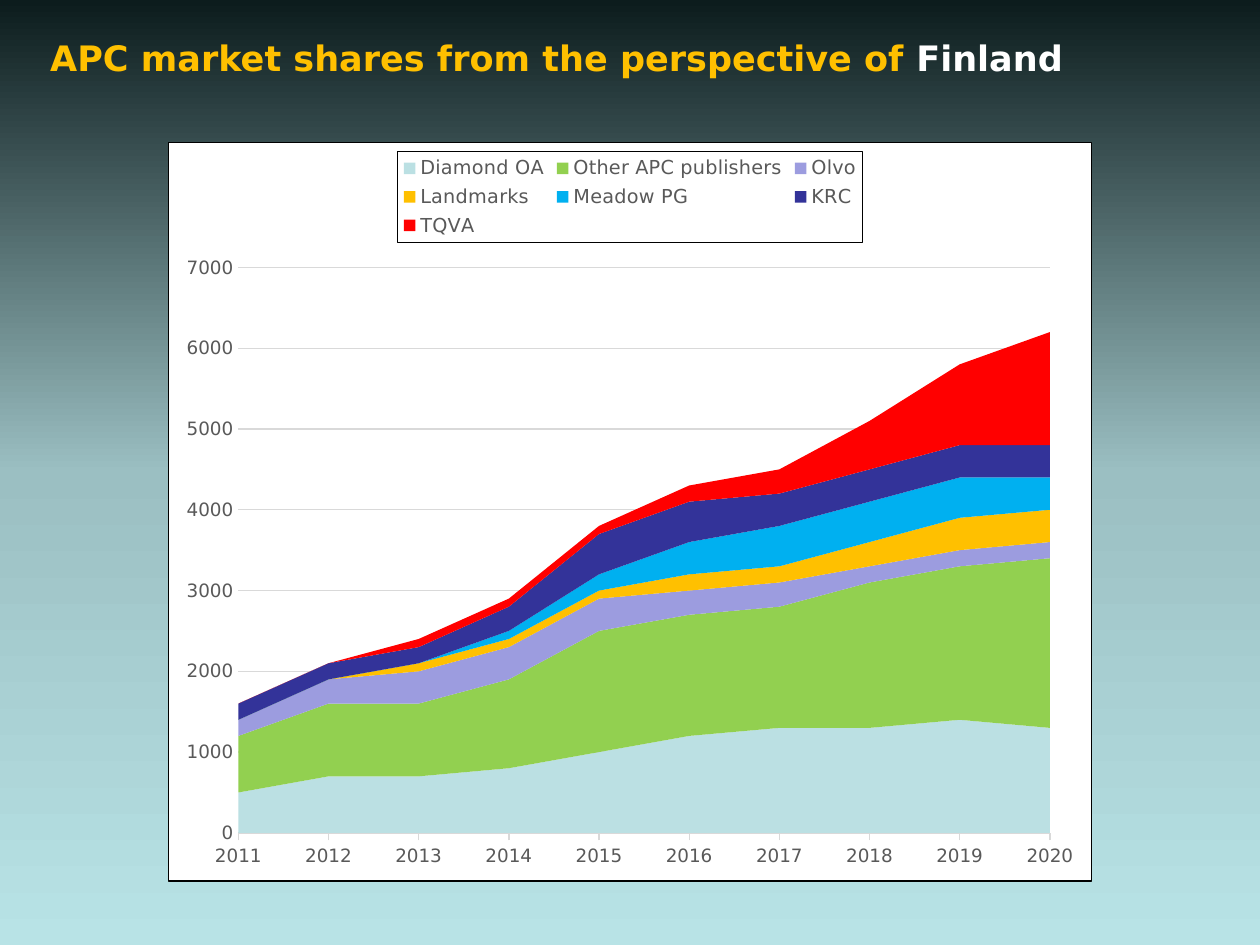
from copy import deepcopy
from dataclasses import dataclass

import pptx
import pptx.chart.data
import pptx.dml.color
import pptx.enum.chart
import pptx.enum.text
import pptx.oxml
import pptx.oxml.ns
import pptx.util

WIDTH = pptx.util.Inches(10)
HEIGHT = pptx.util.Inches(7.5)
FONT = "DejaVu Sans"
COLOURS = {
    "sky_top": "0C1C1D",
    "sky_middle": "9BBFC2",
    "sky_bottom": "B8E3E6",
    "gold": "FFC000",
    "white": "FFFFFF",
    "black": "000000",
    "label": "595959",
    "grid": "D9D9D9",
    "pale_teal": "BBE0E3",
    "green": "92D050",
    "lilac": "9C9CDF",
    "blue": "00B0F0",
    "navy": "333399",
    "red": "FF0000",
}


@dataclass(frozen=True)
class Share:
    left: float
    top: float
    width: float
    height: float

    def lengths(self) -> tuple[int, int, int, int]:
        return (int(self.left * WIDTH), int(self.top * HEIGHT),
                int(self.width * WIDTH), int(self.height * HEIGHT))


@dataclass(frozen=True)
class TitleRun:
    wording: str
    colour: str


@dataclass(frozen=True)
class Publisher:
    name: str
    colour: str
    articles: tuple[int, ...]


TITLE_AREA = Share(0.03, 0.027, 0.909, 0.067)
CHART_AREA = Share(0.133, 0.15, 0.734, 0.783)
TITLE = (
    TitleRun("APC market shares from the perspective of ", "gold"),
    TitleRun("Finland", "white"),
)
YEARS = [str(year) for year in range(2011, 2021)]
PUBLISHERS = (
    Publisher("Diamond OA", "pale_teal",
              (500, 700, 700, 800, 1000, 1200, 1300, 1300, 1400, 1300)),
    Publisher("Other APC publishers", "green",
              (700, 900, 900, 1100, 1500, 1500, 1500, 1800, 1900, 2100)),
    Publisher("Olvo", "lilac",
              (200, 300, 400, 400, 400, 300, 300, 200, 200, 200)),
    Publisher("Landmarks", "gold",
              (0, 0, 100, 100, 100, 200, 200, 300, 400, 400)),
    Publisher("Meadow PG", "blue",
              (0, 0, 0, 100, 200, 400, 500, 500, 500, 400)),
    Publisher("KRC", "navy",
              (200, 200, 200, 300, 500, 500, 400, 400, 400, 400)),
    Publisher("TQVA", "red",
              (0, 0, 100, 100, 100, 200, 300, 600, 1000, 1400)),
)


def rgb(colour: str) -> pptx.dml.color.RGBColor:
    return pptx.dml.color.RGBColor.from_string(COLOURS[colour])


def style_font(font, size: float, colour: str) -> None:
    font.name = FONT
    font.size = pptx.util.Pt(size)
    font.color.rgb = rgb(colour)


def style_line(line, colour: str) -> None:
    line.color.rgb = rgb(colour)
    line.width = pptx.util.Pt(0.75)


def paint_background(slide) -> None:
    fill = slide.background.fill
    fill.gradient()
    fill.gradient_angle = 270
    stop_list = slide.element.xpath(".//a:gsLst")[0]
    stop_list.append(deepcopy(stop_list[-1]))
    for index, (stop, colour) in enumerate(
            zip(fill.gradient_stops, ("sky_top", "sky_middle", "sky_bottom"))):
        stop.position = index / 2
        stop.color.rgb = rgb(colour)


def add_title(slide) -> None:
    frame = slide.shapes.add_textbox(*TITLE_AREA.lengths()).text_frame
    frame.word_wrap = True
    frame.vertical_anchor = pptx.enum.text.MSO_ANCHOR.MIDDLE
    for part in TITLE:
        run = frame.paragraphs[0].add_run()
        run.text = part.wording
        style_font(run.font, 20, part.colour)
        run.font.bold = True


def frame_in_black(text_properties) -> None:
    text_properties.addprevious(pptx.oxml.parse_xml(
        f'<c:spPr {pptx.oxml.ns.nsdecls("c", "a")}>'
        f'<a:solidFill><a:srgbClr val="{COLOURS["white"]}"/></a:solidFill>'
        f'<a:ln w="{pptx.util.Pt(0.75)}"><a:solidFill>'
        f'<a:srgbClr val="{COLOURS["black"]}"/></a:solidFill></a:ln></c:spPr>'))


def style_axes(chart) -> None:
    years, articles = chart.category_axis, chart.value_axis
    for axis in (years, articles):
        style_font(axis.tick_labels.font, 10.5, "label")
        axis.minor_tick_mark = pptx.enum.chart.XL_TICK_MARK.NONE
    years.major_tick_mark = pptx.enum.chart.XL_TICK_MARK.OUTSIDE
    years.has_major_gridlines = False
    style_line(years.format.line, "grid")
    articles.major_tick_mark = pptx.enum.chart.XL_TICK_MARK.NONE
    articles.minimum_scale = 0
    articles.maximum_scale = 7000
    articles.major_unit = 1000
    articles.has_major_gridlines = True
    style_line(articles.major_gridlines.format.line, "grid")
    articles.format.line.fill.background()
    for crossing in chart.element.xpath(".//c:crossBetween"):
        crossing.set("val", "midCat")


def add_market_chart(slide) -> None:
    data = pptx.chart.data.CategoryChartData(number_format="General")
    data.categories = YEARS
    for publisher in PUBLISHERS:
        data.add_series(publisher.name, publisher.articles)
    chart = slide.shapes.add_chart(
        pptx.enum.chart.XL_CHART_TYPE.AREA_STACKED,
        *CHART_AREA.lengths(), data).chart
    chart.has_title = False
    style_font(chart.font, 10.5, "black")
    chart.plots[0].vary_by_categories = False
    for series, publisher in zip(chart.plots[0].series, PUBLISHERS):
        series.format.fill.solid()
        series.format.fill.fore_color.rgb = rgb(publisher.colour)
        series.format.line.fill.background()
    style_axes(chart)
    chart.has_legend = True
    chart.legend.position = pptx.enum.chart.XL_LEGEND_POSITION.TOP
    chart.legend.include_in_layout = False
    style_font(chart.legend.font, 11, "label")
    for text_properties in chart.element.xpath("./c:txPr | .//c:legend/c:txPr"):
        frame_in_black(text_properties)


def main() -> None:
    deck = pptx.Presentation()
    deck.slide_width = WIDTH
    deck.slide_height = HEIGHT
    slide = deck.slides.add_slide(deck.slide_layouts[6])
    paint_background(slide)
    add_title(slide)
    add_market_chart(slide)
    deck.save("out.pptx")


if __name__ == "__main__":
    main()
